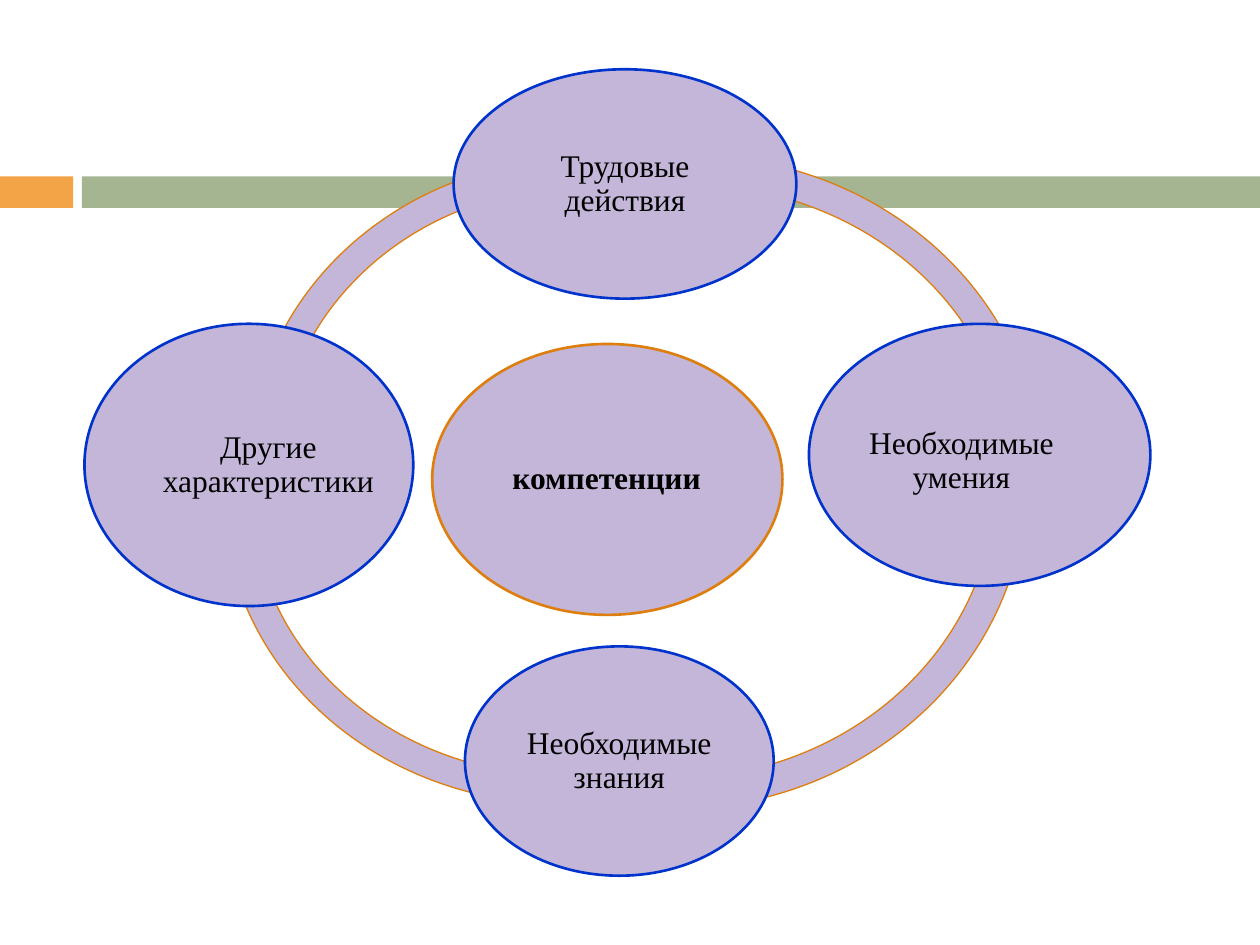
from pptx import Presentation
from pptx.dml.color import RGBColor
from pptx.enum.shapes import MSO_SHAPE as Shape
from pptx.enum.text import MSO_ANCHOR as Anchor, PP_ALIGN as Align
from pptx.util import Inches, Pt

ORANGE = RGBColor(0xF3, 0xA4, 0x47)
GREEN = RGBColor(0xA5, 0xB5, 0x92)
LILAC = RGBColor(0xC4, 0xB6, 0xD9)
RUST = RGBColor(0xDD, 0x7E, 0x0E)
BLUE = RGBColor(0x00, 0x33, 0xCC)
BLACK = RGBColor(0, 0, 0)

FONT = "Times New Roman"
ARC_THICKNESS = 0.046
ADJUSTMENT_PER_DEGREE = 0.6  # 60000 angle units per degree, scaled by 100000

BARS = [
    ((0, 1.4, 0.58, 0.25), ORANGE),
    ((0.65, 1.4, 9.35, 0.25), GREEN),
]

# Position, then start and end angle in degrees, clockwise from the right
ARCS = [
    ((2.64, 1.23, 5.62, 5.09), 260.54, 358.57),
    ((1.77, 1.47, 5.38, 4.91), 82.44, 178.56),
    ((1.97, 1.26, 5.28, 4.92), 177.38, 278.87),
    ((2.53, 1.17, 5.62, 5.25), 356.77, 100.81),
]

# Label, position of the ellipse, position of its text
CENTRE = ("компетенции", (3.43, 2.73, 2.78, 2.15), (3.83, 3.04, 1.97, 1.52))
COMPONENTS = [
    ("Трудовые действия", (3.6, 0.55, 2.72, 1.82), (4, 0.82, 1.92, 1.29)),
    ("Необходимые умения", (6.42, 2.57, 2.71, 2.08), (6.67, 2.93, 1.92, 1.47)),
    ("Необходимые знания", (3.69, 5.13, 2.45, 1.82), (4.05, 5.4, 1.73, 1.28)),
    ("Другие характеристики", (0.67, 2.57, 2.61, 2.24), (1.21, 2.9, 1.84, 1.59)),
]


def add_filled(shapes, kind, place, fill, line=None, width=0.75):
    shape = shapes.add_shape(kind, *map(Inches, place))
    shape.shadow.inherit = False
    shape.fill.solid()
    shape.fill.fore_color.rgb = fill
    if line is None:
        shape.line.fill.background()
    else:
        shape.line.color.rgb = line
        shape.line.width = Pt(width)
    return shape


def add_arc(shapes, place, start, end):
    arc = add_filled(shapes, Shape.BLOCK_ARC, place, LILAC, RUST)
    arc.adjustments[0] = start * ADJUSTMENT_PER_DEGREE
    arc.adjustments[1] = end * ADJUSTMENT_PER_DEGREE
    arc.adjustments[2] = ARC_THICKNESS


def add_label(shapes, text, place, bold):
    box = shapes.add_textbox(*map(Inches, place))
    frame = box.text_frame
    frame.word_wrap = True
    frame.vertical_anchor = Anchor.MIDDLE
    frame.margin_left = frame.margin_right = Inches(0.03)
    frame.margin_top = frame.margin_bottom = Inches(0.03)
    para = frame.paragraphs[0]
    para.alignment = Align.CENTER
    para.line_spacing = 0.9
    span = para.add_run()
    span.text = text
    span.font.name = FONT
    span.font.size = Pt(18)
    span.font.bold = bold
    span.font.color.rgb = BLACK


def add_node(slide, text, ellipse_place, text_place, line, bold=False):
    """Group an ellipse with its label, which may sit off its centre."""
    shapes = slide.shapes.add_group_shape().shapes
    add_filled(shapes, Shape.OVAL, ellipse_place, LILAC, line, 1.5)
    add_label(shapes, text, text_place, bold)


def main():
    deck = Presentation()
    deck.slide_width, deck.slide_height = Inches(10), Inches(7.5)
    slide = deck.slides.add_slide(deck.slide_layouts[6])
    for place, color in BARS:
        add_filled(slide.shapes, Shape.RECTANGLE, place, color)
    for place, start, end in ARCS:
        add_arc(slide.shapes, place, start, end)
    add_node(slide, *CENTRE, RUST, bold=True)
    for component in COMPONENTS:
        add_node(slide, *component, BLUE)
    deck.save("out.pptx")


if __name__ == "__main__":
    main()
